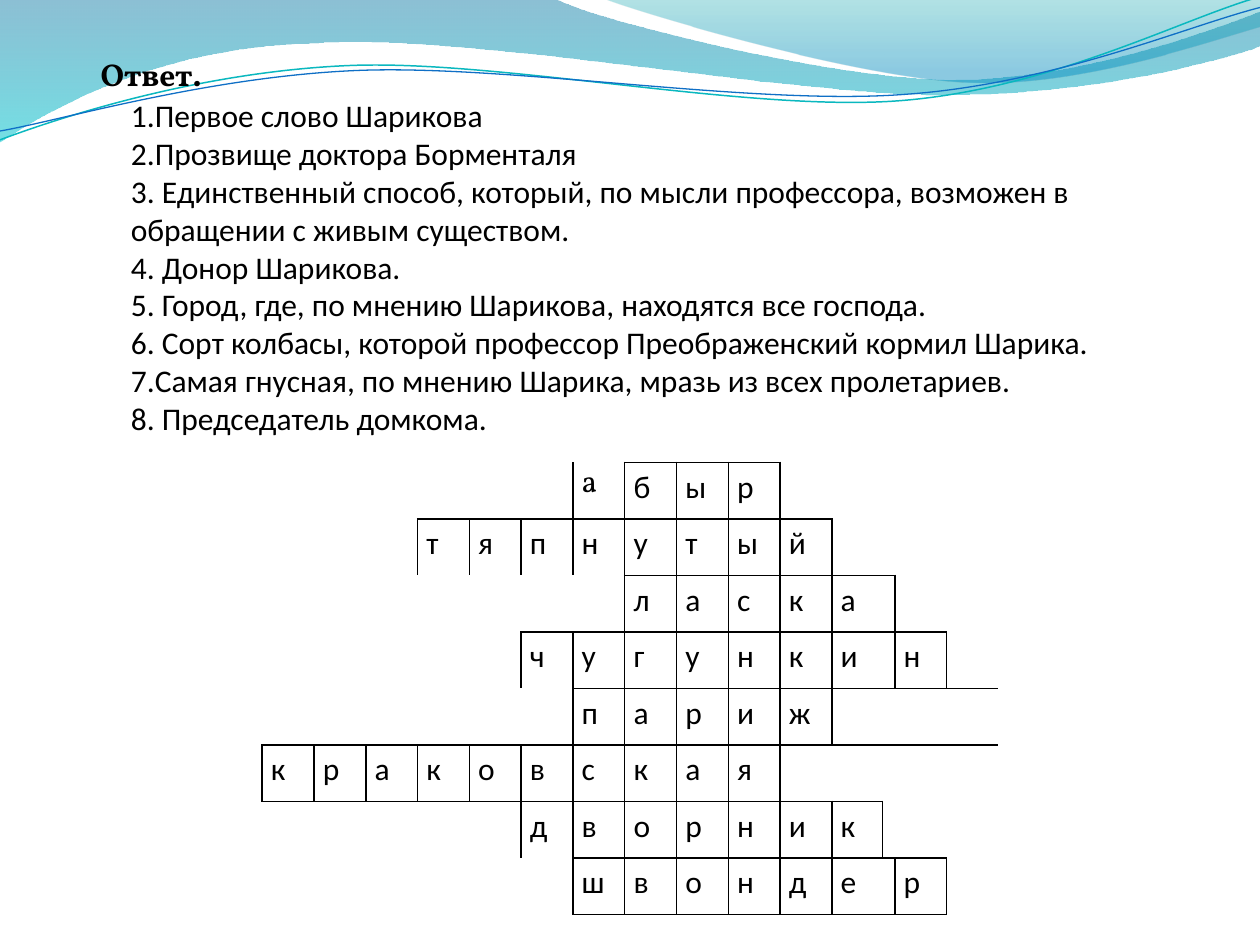
import math
import pptx
import pptx.dml.color
import pptx.enum.text
import pptx.oxml
import pptx.oxml.ns
import pptx.util
from dataclasses import dataclass

Inches = pptx.util.Inches
Pt = pptx.util.Pt
qn = pptx.oxml.ns.qn
RGB = pptx.dml.color.RGBColor.from_string


@dataclass(frozen=True)
class Theme:
    body_font: str = "Calibri"
    title_font: str = "Vollkorn"
    size: float = 18
    ink: str = "000000"
    teal_line: str = "0AB8BF"
    blue_line: str = "0F6FC6"
    wave: tuple = ((0, "0074A1", 45), (100, "00C6CF", 55))
    crest: tuple = ((0, "00A1A9", 30), (80, "008BBF", 45))
    border: float = 1
    no_grid: str = "{2D5ABB26-0587-4C30-8999-92F81FD0307C}"


def element(xml):
    head, rest = xml.split(">", 1)
    slash = "/" if head.endswith("/") else ""
    head = head.rstrip("/")
    return pptx.oxml.parse_xml(f"{head} {pptx.oxml.ns.nsdecls('a')}{slash}>{rest}")


def turn(commands, center, degrees):
    cx, cy = center
    cos, sin = math.cos(math.radians(degrees)), math.sin(math.radians(degrees))
    turned = []
    for c in commands:
        pairs = [(x - cx, y - cy) for x, y in zip(c[::2], c[1::2])]
        turned.append(tuple(v for x, y in pairs
                            for v in (cx + x * cos - y * sin, cy + x * sin + y * cos)))
    return turned


class Builder:
    def __init__(self, prs, theme):
        self.theme = theme
        self.slide = prs.slides.add_slide(prs.slide_layouts[6])

    def curve(self, commands, closed):
        points = [(Inches(x), Inches(y)) for c in commands for x, y in zip(c[::2], c[1::2])]
        fb = self.slide.shapes.build_freeform(*points[0], scale=1.0)
        fb.add_line_segments(points[1:], close=closed)
        sp = fb.convert_to_shape()
        sp.shadow.inherit = False
        lines = iter(list(sp.element.iter(qn("a:lnTo"))))
        for c in commands[1:]:
            first = next(lines)
            if len(c) == 6:
                bezier = element("<a:cubicBezTo/>")
                first.addprevious(bezier)
                for line in (first, next(lines), next(lines)):
                    bezier.append(line[0])
                    line.getparent().remove(line)
        return sp

    def band(self, commands, stops):
        sp = self.curve(commands, True)
        sp.line.fill.background()
        sp.fill.background()
        gs = "".join(f'<a:gs pos="{pos * 1000}"><a:srgbClr val="{color}">'
                     f'<a:alpha val="{alpha * 1000}"/></a:srgbClr></a:gs>'
                     for pos, color, alpha in stops)
        xml = f'<a:gradFill><a:gsLst>{gs}</a:gsLst><a:lin ang="5400000" scaled="0"/></a:gradFill>'
        spPr = sp.element.spPr
        spPr.replace(spPr.find(qn("a:noFill")), element(xml))

    def ribbon(self, commands, center, color, width, tilt=2.7):
        sp = self.curve(turn(commands, center, tilt), False)
        sp.rotation = 360 - tilt
        sp.fill.background()
        sp.line.color.rgb = RGB(color)
        sp.line.width = Pt(width)

    def style(self, p, font, bold=False):
        p.font.name = font
        p.font.size = Pt(self.theme.size)
        p.font.bold = bold
        p.font.color.rgb = RGB(self.theme.ink)

    def text(self, box, lines, font, bold=False, anchor=pptx.enum.text.MSO_ANCHOR.TOP):
        tf = self.slide.shapes.add_textbox(*map(Inches, box)).text_frame
        tf.word_wrap = True
        tf.auto_size = pptx.enum.text.MSO_AUTO_SIZE.SHAPE_TO_FIT_TEXT
        tf.vertical_anchor = anchor
        tf.text = "\n".join(lines)
        for p in tf.paragraphs:
            self.style(p, font, bold)

    def borders(self, cell, sides):
        tcPr = cell._tc.get_or_add_tcPr()
        for i, side in enumerate("LRTB"):
            fill = (f'<a:solidFill><a:srgbClr val="{self.theme.ink}"/></a:solidFill>'
                    if side in sides else "<a:noFill/>")
            tcPr.insert(i, element(f'<a:ln{side} w="{Pt(self.theme.border)}">{fill}</a:ln{side}>'))

    def letter(self, cell, char, font, sides, spacing):
        cell.margin_left = cell.margin_right = Inches(0.07)
        cell.margin_top = cell.margin_bottom = 0
        cell.text = char
        p = cell.text_frame.paragraphs[0]
        self.style(p, font)
        p.line_spacing = spacing
        self.borders(cell, sides)

    def crossword(self, box, widths, words, blanks, wide_col, wide_rows):
        frame = self.slide.shapes.add_table(len(words), len(widths), *map(Inches, box))
        table = frame.table
        table.first_row = table.horz_banding = False
        table._tbl.tblPr.find(qn("a:tableStyleId")).text = self.theme.no_grid
        for col, width in zip(table.columns, widths):
            col.width = Inches(width)
        for cell in table.iter_cells():
            cell.fill.background()
        for r, (start, word) in enumerate(words):
            for c, char in enumerate(word, start):
                if r in wide_rows and c == wide_col:
                    table.cell(r, c).merge(table.cell(r, c + 1))
                cell = table.cell(r, c + (c > wide_col))
                if (r, c) == (0, start):
                    self.letter(cell, char, self.theme.title_font, "LRB", 1.0)
                else:
                    self.letter(cell, char, self.theme.body_font, "LRTB", 1.15)
        for r, c, rows, cols, sides in blanks:
            cell = table.cell(r, c)
            if rows * cols > 1:
                cell.merge(table.cell(r + rows - 1, c + cols - 1))
            self.borders(cell, sides)


WAVE = [(0, 0), (4.4, -0.01), (4.76, 0.17, 6.64, 0.63, 7.58, 0.63),
        (8.53, 0.63, 9.58, 0.26, 10, 0.09), (10.01, 0.36),
        (9.83, 0.44, 8.7, 0.76, 7.46, 0.75), (6.22, 0.75, 3.82, 0.28, 2.57, 0.34),
        (1.29, 0.36, 0.46, 0.83, -0.01, 1.13)]
CREST = [(4.79, -0.01), (5.09, 0.11, 6.82, 0.62, 7.69, 0.65),
         (8.56, 0.69, 9.61, 0.32, 10, 0.21), (10, 0)]
TEAL = [(0, 1.11), (0.48, 0.93, 1.58, 0.57, 2.77, 0.52),
        (3.95, 0.47, 5.93, 0.89, 7.13, 0.8), (8.33, 0.71, 9.38, 0.15, 9.98, -0.02)]
BLUE = [(0, 1.04), (0.47, 0.96, 1.64, 0.61, 2.83, 0.56),
        (4.03, 0.51, 5.97, 0.84, 7.17, 0.75), (8.36, 0.67, 9.41, 0.21, 10, 0.06)]

CLUES = [
    "1.Первое слово Шарикова",
    "2.Прозвище доктора Борменталя",
    "3. Единственный способ, который, по мысли профессора, возможен в обращении с живым существом.",
    "4. Донор Шарикова.",
    "5. Город, где, по мнению Шарикова, находятся все господа.",
    "6. Сорт колбасы, которой профессор Преображенский кормил Шарика.",
    "7.Самая гнусная, по мнению Шарика, мразь из всех пролетариев.",
    "8. Председатель домкома.",
]
WORDS = [(7, "абыр"), (4, "тяпнутый"), (8, "ласка"), (6, "чугункин"),
         (7, "париж"), (1, "краковская"), (6, "дворник"), (7, "швондер")]
BLANKS = [
    (0, 0, 1, 7, "R"), (0, 11, 1, 6, "LB"),
    (1, 0, 1, 4, "R"), (1, 12, 1, 5, "LB"),
    (2, 0, 1, 8, "R"), (2, 14, 1, 3, "LB"),
    (3, 0, 1, 6, "R"), (3, 15, 1, 2, "L"),
    (4, 0, 1, 7, "R"), (4, 12, 1, 4, "LT"), (4, 16, 4, 1, ""),
    (5, 0, 1, 1, "R"), (5, 11, 1, 5, "LTB"),
    (6, 0, 1, 1, ""), (6, 1, 1, 5, "TR"), (6, 13, 1, 3, "LB"),
    (7, 0, 1, 7, "R"), (7, 15, 1, 1, "L"),
]


def main():
    prs = pptx.Presentation()
    prs.slide_width, prs.slide_height = Inches(10), Inches(7.5)
    theme = Theme()
    s = Builder(prs, theme)
    s.band(WAVE, theme.wave)
    s.band(CREST, theme.crest)
    s.ribbon(TEAL, (4.99, 0.58), theme.teal_line, 0.85)
    s.ribbon(BLUE, (5, 0.59), theme.blue_line, 0.75)
    s.text((0.94, 0.7, 8.05, 2.83), CLUES, theme.body_font,
           anchor=pptx.enum.text.MSO_ANCHOR.MIDDLE)
    table_width, split = 6.67, [0.4, 0.1]
    unit = (table_width - sum(split)) / 15
    s.crossword((1.67, 3.67, table_width, 3.59), [unit] * 12 + split + [unit] * 3,
                WORDS, BLANKS, wide_col=12, wide_rows=(2, 3, 7))
    s.text((0.7, 0.39, 4.3, 0.4), ["Ответ."], theme.title_font, bold=True)
    prs.save("out.pptx")


if __name__ == "__main__":
    main()
